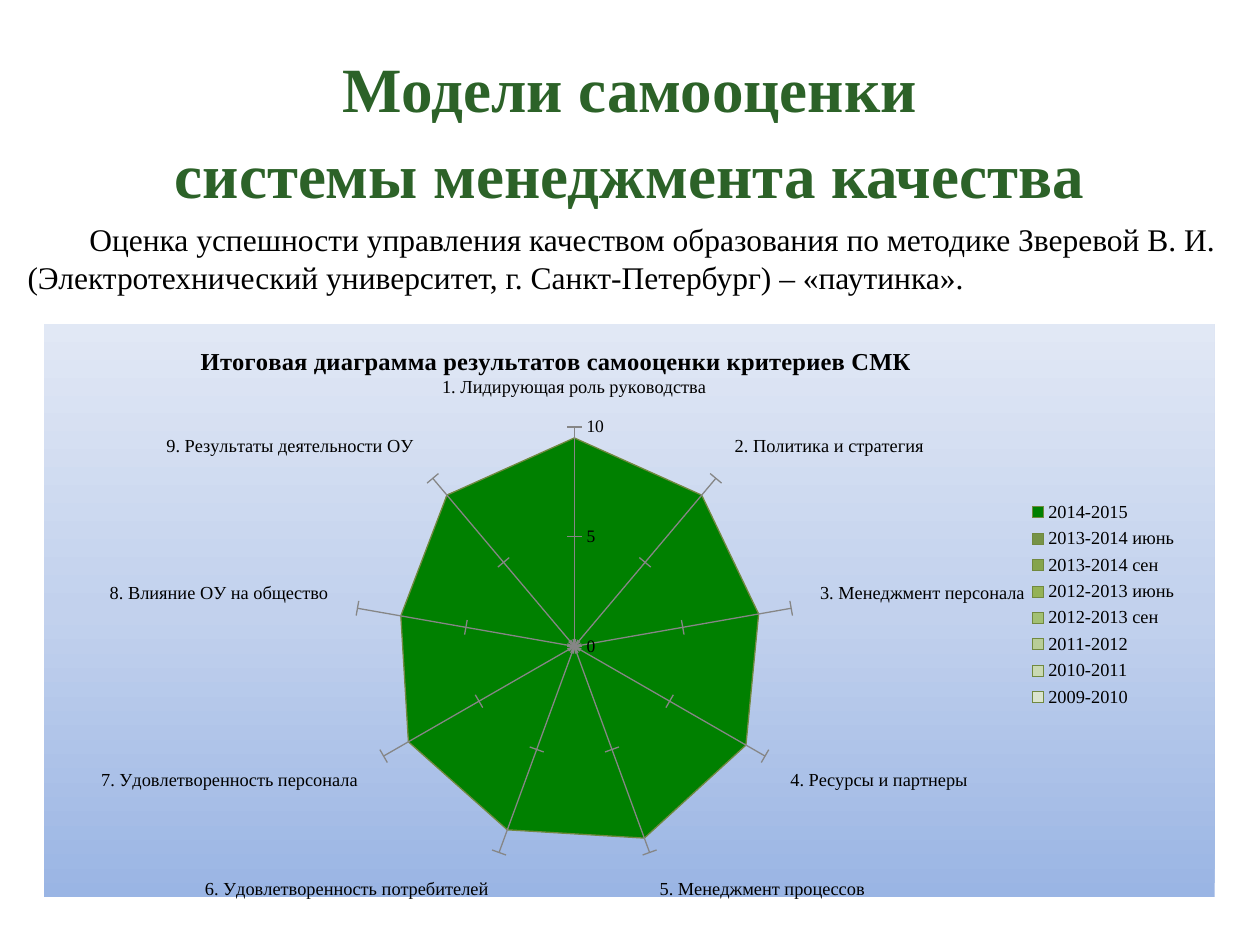
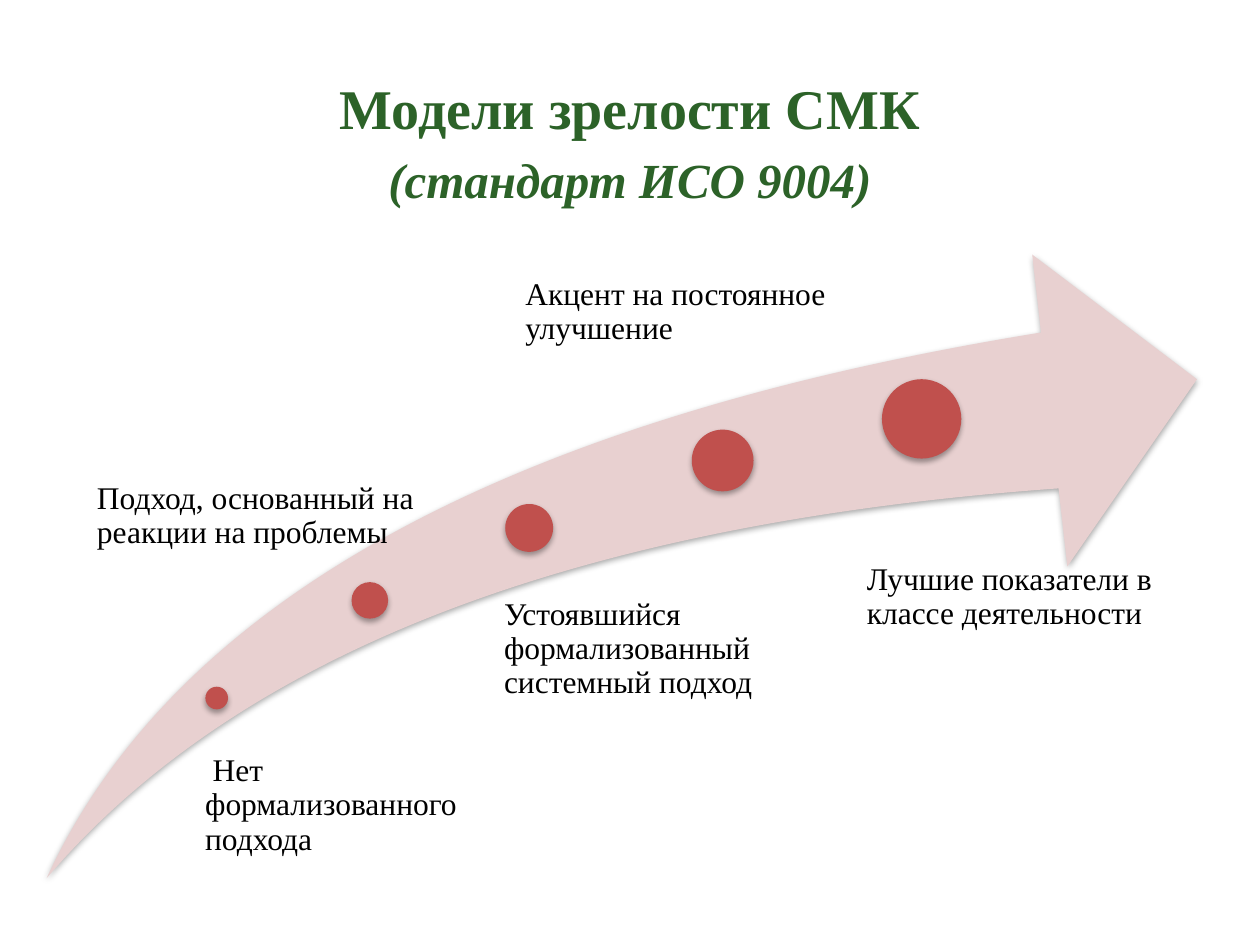
from lxml import etree
from pptx import Presentation, util as u
from pptx.chart.data import CategoryChartData
from pptx.dml.color import RGBColor
from pptx.enum import chart as ch, shapes, text
from pptx.oxml import parse_xml
from pptx.oxml.ns import qn, nsdecls

FONT = "Times New Roman"
HUE = {"title": "2C6228", "ink": "000000", "axis": "868686", "edge": "71893F",
       "arrow": "E8D0D0", "dot": "C0504D"}

# Slide 1
HEAD = [("Модели самооценки\vсистемы менеджмента качества", dict(size=36))]
LEAD = ("Оценка успешности управления качеством образования по методике "
        "Зверевой В. И. (Электротехнический университет, "
        "г. Санкт-Петербург) – «паутинка».")
CHART = "Итоговая диаграмма результатов самооценки критериев СМК"
CATS = ["1. Лидирующая роль руководства", "2. Политика и стратегия",
        "3. Менеджмент персонала", "4. Ресурсы и партнеры",
        "5. Менеджмент процессов", "6. Удовлетворенность потребителей",
        "7. Удовлетворенность персонала", "8. Влияние ОУ на общество",
        "9. Результаты деятельности ОУ"]
YEARS = [
    ("2014-2015", "008000", (9.5, 9, 8.5, 9, 9.3, 8.9, 8.7, 8, 9)),
    ("2013-2014 июнь", "769346", (9.2, 8.9, 8, 8.9, 8.9, 8.8, 8.6, 7.5, 9)),
    ("2013-2014 сен", "85A44C", (9, 8.7, 7.8, 8.5, 8.8, 8.8, 8.5, 7.2, 8.5)),
    ("2012-2013 июнь", "94B255", (8.9, 8.5, 7.5, 8.3, 8.5, 8.5, 8, 6.8, 8)),
    ("2012-2013 сен", "A2C072", (8.8, 8, 7.2, 8, 8.4, 8.2, 7.8, 6.5, 7.5)),
    ("2011-2012", "B8CD97", (8, 7.5, 6.8, 7.6, 5.8, 7, 7, 6, 6)),
    ("2010-2011", "C9D9B3", (7, 6, 6, 6.4, 4.8, 7, 7, 5, 5.3)),
    ("2009-2010", "DAE4CE", (6.4, 4.5, 4.4, 4.8, 4.6, 5.4, 5.4, 3, 4.6)),
]
SKY = [(0, "9AB5E4"), (50, "C2D1ED"), (100, "E1E8F5")]

# Slide 2
RIPE = [("Модели зрелости СМК", dict(size=32)),
        ("(стандарт ИСО 9004)", dict(size=28, italic=True))]
# label, label box, left inset, first-line indent, dot (left, top, size)
STEPS = [
    ("Нет формализованного подхода", (1.53, 5.99, 2.43, 0.77), 0.1, 0.06,
     (1.63, 5.45, 0.18)),
    ("Подход, основанный на реакции на проблемы", (0.62, 3.83, 2.93, 0.75),
     0.15, 0, (2.79, 4.62, 0.29)),
    ("Устоявшийся формализованный системный подход", (3.8, 4.75, 2.51, 0.96),
     0.2, 0, (4.01, 4, 0.38)),
    ("Акцент на постоянное улучшение", (3.91, 2.21, 2.99, 1.05), 0.26, 0,
     (5.49, 3.41, 0.49)),
    ("Лучшие показатели в классе деятельности", (6.55, 4.47, 3.04, 1.05),
     0.33, 0, (7, 3.01, 0.63)),
]


def rgb(name):
    return RGBColor.from_string(HUE.get(name, name))


def place(box):
    return [u.Inches(n) for n in box]


def style(font, size, color="ink", bold=False, italic=False):
    font.name, font.size = FONT, u.Pt(size)
    font.bold, font.italic = bold, italic
    font.color.rgb = rgb(color)


def write(slide, box, paras, size=18, color="ink", bold=False, align=None,
          anchor="TOP", line=None, indent=0, inset=None):
    """Add a text box; paras is a list of (text, font overrides)."""
    frame = slide.shapes.add_textbox(*place(box)).text_frame
    frame.word_wrap = True
    frame.vertical_anchor = getattr(text.MSO_ANCHOR, anchor)
    if inset is not None:
        frame.margin_left = u.Inches(inset)
        frame.margin_top = frame.margin_right = frame.margin_bottom = 0
    for i, (words, extra) in enumerate(paras):
        para = frame.add_paragraph() if i else frame.paragraphs[0]
        para.text = words
        para.alignment, para.line_spacing = align, line
        if indent:
            para._p.get_or_add_pPr().set("indent", str(u.Inches(indent)))
        for run in para.runs:
            style(run.font, **{"size": size, "color": color, "bold": bold,
                               **extra})


def title(slide, box, paras):
    write(slide, box, paras, color="title", bold=True, anchor="MIDDLE",
          align=text.PP_ALIGN.CENTER, line=1.14)


def shade(slide, kind, box, color):
    """Add a plain filled shape with a soft shadow below it."""
    shape = slide.shapes.add_shape(kind, *place(box))
    shape.fill.solid()
    shape.fill.fore_color.rgb = rgb(color)
    shape.line.fill.background()
    shape.shadow.inherit = False
    shape._element.spPr.find(qn("a:effectLst")).append(parse_xml(
        f'<a:outerShdw {nsdecls("a")} blurRad="40000" dist="23000" '
        'dir="5400000" rotWithShape="0"><a:srgbClr val="000000">'
        '<a:alpha val="35000"/></a:srgbClr></a:outerShdw>'))
    return shape


def settle(part, spot, **vals):
    """Fix a chart part at given shares of the chart's size."""
    old = part.find(qn("c:layout"))
    if old is not None:
        part.remove(old)
    layout = etree.Element(qn("c:layout"))
    man = etree.SubElement(layout, qn("c:manualLayout"))
    for tag, val in vals.items():
        etree.SubElement(man, qn("c:" + tag), val=str(val))
    part.insert(spot, layout)


def radar(slide, box):
    data = CategoryChartData()
    data.categories = CATS
    for name, _, vals in YEARS:
        data.add_series(name, vals)
    chart = slide.shapes.add_chart(ch.XL_CHART_TYPE.RADAR_FILLED, *place(box),
                                   data).chart
    style(chart.font, 10)
    plot = chart.plots[0]
    plot.vary_by_categories = False
    for ser, (_, color, _) in zip(plot.series, YEARS):
        ser.format.fill.solid()
        ser.format.fill.fore_color.rgb = rgb(color)
        ser.format.line.color.rgb = rgb("edge")
        ser.format.line.width = u.Pt(0.75)

    cat, val = chart.category_axis, chart.value_axis
    cat.has_major_gridlines, val.has_major_gridlines = True, False
    style(cat.tick_labels.font, 10.5)
    style(val.tick_labels.font, 10)
    val.minimum_scale, val.maximum_scale, val.major_unit = 0, 10, 5
    for axis in cat, val:
        axis.major_tick_mark = ch.XL_TICK_MARK.CROSS
        axis.format.line.color.rgb = rgb("axis")
    cat.major_gridlines.format.line.color.rgb = rgb("axis")

    chart.has_title = True
    para = chart.chart_title.text_frame.paragraphs[0]
    para.text = CHART
    style(para.runs[0].font, 14, bold=True)
    chart.has_legend = True
    chart.legend.position = ch.XL_LEGEND_POSITION.RIGHT
    chart.legend.include_in_layout = False
    style(chart.legend.font, 10.5)

    space = chart._chartSpace
    body = space.find(qn("c:chart"))
    settle(body.find(qn("c:title")), 1, xMode="edge", yMode="edge",
           x=0.13, y=0.03)
    settle(body.find(qn("c:plotArea")), 0, layoutTarget="inner",
           xMode="edge", yMode="edge", x=0.236, y=0.18, w=0.434, h=0.765)
    settle(body.find(qn("c:legend")), 1, xMode="edge", yMode="edge",
           x=0.83, y=0.3, w=0.15, h=0.38)
    stops = "".join(f'<a:gs pos="{pos * 1000}"><a:srgbClr val="{color}"/></a:gs>'
                    for pos, color in SKY)
    body.addnext(parse_xml(
        f'<c:spPr {nsdecls("c", "a")}><a:gradFill><a:gsLst>{stops}</a:gsLst>'
        '<a:lin ang="16200000" scaled="0"/></a:gradFill>'
        '<a:ln><a:noFill/></a:ln></c:spPr>'))


def main():
    deck = Presentation()
    deck.slide_width, deck.slide_height = u.Inches(10), u.Inches(7.5)
    web, path = [deck.slides.add_slide(deck.slide_layouts[6]) for _ in "12"]

    title(web, (0, 0.21, 10, 1.57), HEAD)
    write(web, (0.12, 1.7, 9.72, 0.71), [(LEAD, {})], indent=0.49)
    radar(web, (0.35, 2.57, 9.29, 4.57))

    arrow = shade(path, shapes.MSO_SHAPE.SWOOSH_ARROW,
                  (0.37, 2.02, 9.13, 4.95), "arrow")
    arrow.adjustments[0] = arrow.adjustments[1] = 0.25
    for words, box, inset, indent, (left, top, size) in STEPS:
        shade(path, shapes.MSO_SHAPE.OVAL, (left, top, size, size), "dot")
        write(path, box, [(words, {})], line=0.9, inset=inset, indent=indent)
    title(path, (0, 0.39, 10, 1.38), RIPE)
    deck.save("out.pptx")


if __name__ == "__main__":
    main()
